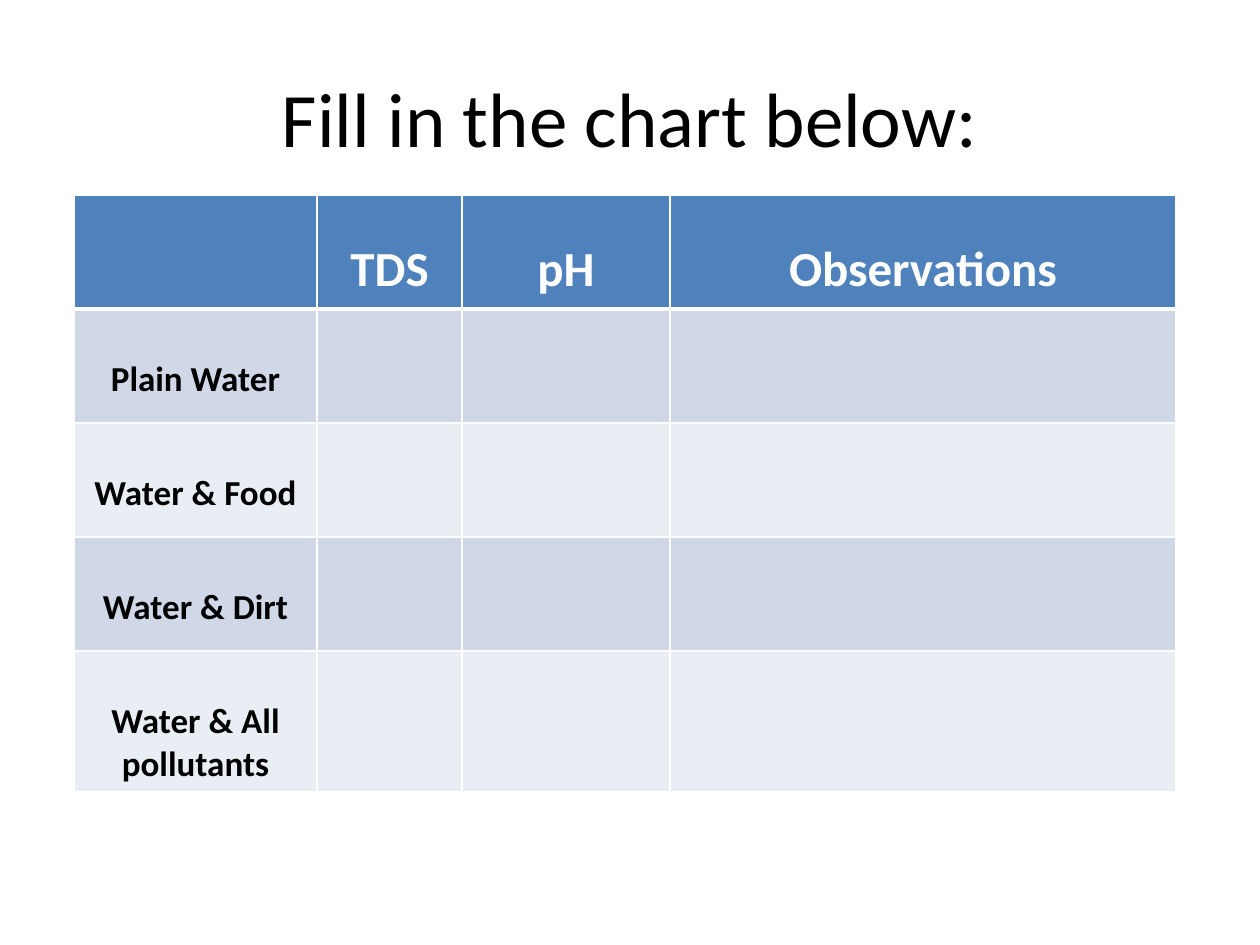
import pptx
import pptx.dml.color
import pptx.enum.text
import pptx.oxml
import pptx.oxml.ns
import pptx.util

RGBColor = pptx.dml.color.RGBColor
BLACK = RGBColor(0x00, 0x00, 0x00)
WHITE = RGBColor(0xFF, 0xFF, 0xFF)
HEADER_BLUE = RGBColor(0x4F, 0x81, 0xBD)
BAND_DARK = RGBColor(0xD0, 0xD8, 0xE8)
BAND_LIGHT = RGBColor(0xE9, 0xED, 0xF4)

PX = 914400 / 126


def px(count):
    return pptx.util.Emu(round(count * PX))


def write(frame, text, size, color=BLACK, bold=False):
    paragraph = frame.paragraphs[0]
    paragraph.alignment = pptx.enum.text.PP_ALIGN.CENTER
    run = paragraph.add_run()
    run.text = text
    run.font.name = "Calibri"
    run.font.size = pptx.util.Pt(size)
    run.font.bold = bold
    run.font.color.rgb = color


presentation = pptx.Presentation()
presentation.slide_width = px(1260)
presentation.slide_height = px(945)
slide = presentation.slides.add_slide(presentation.slide_layouts[5])

title = slide.shapes.title
title.left, title.top, title.width, title.height = px(63), px(38), px(1134), px(158)
title.text_frame.vertical_anchor = pptx.enum.text.MSO_ANCHOR.MIDDLE
write(title.text_frame, "Fill in the chart below:", 44)

headings = ["", "TDS", "pH", "Observations"]
samples = ["Plain Water", "Water & Food", "Water & Dirt", "Water & All pollutants"]
rows = [headings] + [[sample, "", "", ""] for sample in samples]
column_widths = [243, 145, 208, 506]
row_height = 114

results = slide.shapes.add_table(
    len(rows), len(headings), px(74), px(195),
    px(sum(column_widths)), px(row_height * len(rows))).table
for column, width in zip(results.columns, column_widths):
    column.width = px(width)

for r, row in enumerate(rows):
    is_header = r == 0
    for c, text in enumerate(row):
        cell = results.cell(r, c)
        # The top margin drops each label to the lower part of its row
        if text:
            cell.margin_top = px(45 if is_header else 49)
            write(cell.text_frame, text, 28 if is_header else 20,
                  color=WHITE if is_header else BLACK, bold=True)

        # The line between header and body is thicker than the rest
        thick_side = {0: "B", 1: "T"}.get(r)
        properties = cell._tc.get_or_add_tcPr()
        for side in "LRTB":
            line_width = pptx.util.Pt(3 if side == thick_side else 1)
            properties.append(pptx.oxml.parse_xml(
                f'<a:ln{side} {pptx.oxml.ns.nsdecls("a")} w="{line_width}">'
                f'<a:solidFill><a:srgbClr val="{WHITE}"/></a:solidFill></a:ln{side}>'))

        cell.fill.solid()
        if is_header:
            cell.fill.fore_color.rgb = HEADER_BLUE
        else:
            cell.fill.fore_color.rgb = BAND_DARK if r % 2 else BAND_LIGHT

presentation.save("out.pptx")
